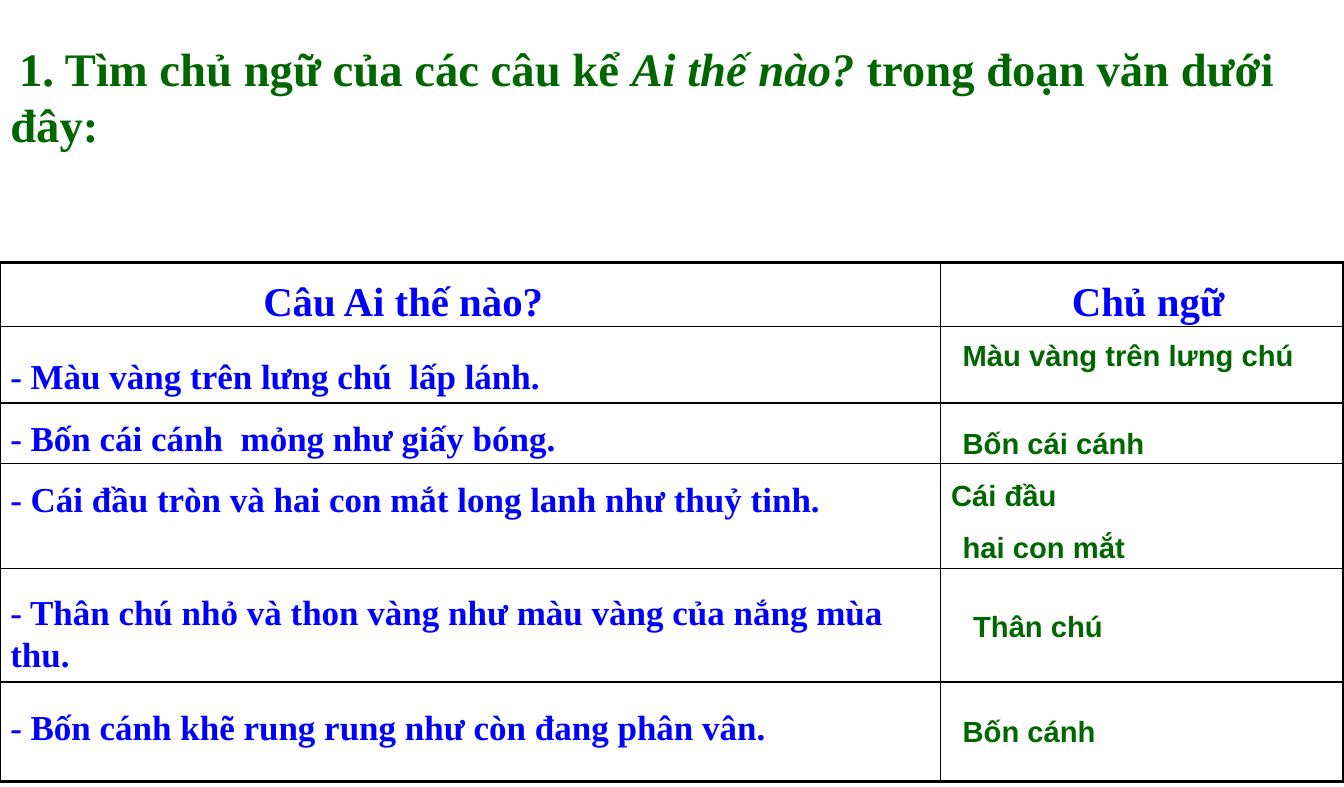
from lxml.etree import SubElement
from pptx import Presentation
from pptx.dml.color import RGBColor
from pptx.enum.text import MSO_AUTO_SIZE, PP_ALIGN
from pptx.oxml.ns import qn
from pptx.util import Emu, Inches, Pt

WIDTH, HEIGHT = 12.8, 7.5
SENTENCE_WIDTH = 0.7 * WIDTH
TABLE_TOP = HEIGHT / 3
ROW_HEIGHTS = [0.61, 0.73, 0.58, 1, 1.08, 0.95]
BLUE, GREEN = "0000FF", "006600"
SERIF, SANS = "Times New Roman", "Arial"

presentation = Presentation()
presentation.slide_width = Emu(11704638)
presentation.slide_height = Emu(6858000)
slide = presentation.slides.add_slide(presentation.slide_layouts[6])


def add_text(runs, left, top, width, height, font, size, color, align=PP_ALIGN.LEFT):
    """Add a bold one-paragraph text box and return its paragraph."""
    frame = slide.shapes.add_textbox(
        Inches(left), Inches(top), Inches(width), Inches(height)).text_frame
    frame.word_wrap = True
    frame.auto_size = MSO_AUTO_SIZE.SHAPE_TO_FIT_TEXT
    paragraph = frame.paragraphs[0]
    paragraph.alignment = align
    paragraph.font.name, paragraph.font.size, paragraph.font.bold = font, Pt(size), True
    paragraph.font.color.rgb = RGBColor.from_string(color)
    for words in runs:
        paragraph.add_run().text = words
    return paragraph


def add_border(cell, side, points):
    line = SubElement(cell._tc.get_or_add_tcPr(), qn(f"a:ln{side}"), w=str(Pt(points)))
    SubElement(SubElement(line, qn("a:solidFill")), qn("a:srgbClr"), val="000000")


# Empty ruled table with a heavier outer frame
grid = slide.shapes.add_table(
    len(ROW_HEIGHTS), 2, 0, Inches(TABLE_TOP), Inches(WIDTH), Inches(sum(ROW_HEIGHTS))).table
grid.first_row = grid.horz_banding = False
for column, width in zip(grid.columns, [SENTENCE_WIDTH, WIDTH - SENTENCE_WIDTH]):
    column.width = Inches(width)
last_row = len(ROW_HEIGHTS) - 1
for r, height in enumerate(ROW_HEIGHTS):
    grid.rows[r].height = Inches(height)
    for c in range(2):
        cell = grid.cell(r, c)
        outer_sides = {"L": c == 0, "R": c == 1, "T": r == 0, "B": r == last_row}
        for side, outer in outer_sides.items():
            add_border(cell, side, 2.25 if outer else 1)
        cell.fill.background()

# Column headings
for heading, left, width in [("Câu Ai thế nào?", 0, 0.6 * WIDTH), ("Chủ ngữ", 9.07, 3.73)]:
    add_text([heading], left, 2.58, width, 0.57, SERIF, 28, BLUE, PP_ALIGN.CENTER)

# Sentences
for sentence, top, height, align in [
    ("- Màu vàng trên lưng chú  lấp lánh.", 3.33, 0.5, PP_ALIGN.JUSTIFY),
    ("- Bốn cái cánh  mỏng như giấy bóng.", 3.92, 0.5, PP_ALIGN.JUSTIFY),
    ("- Cái đầu tròn và hai con mắt long lanh như thuỷ tinh.", 4.5, 0.51, PP_ALIGN.LEFT),
    ("- Bốn cánh khẽ rung rung như còn đang phân vân.", 6.67, 0.51, PP_ALIGN.LEFT),
    ("- Thân chú nhỏ và thon vàng như màu vàng của nắng mùa thu.", 5.58, 0.91, PP_ALIGN.LEFT),
]:
    add_text([sentence], 0, top, SENTENCE_WIDTH, height, SERIF, 24, BLUE, align)

# Subjects of the sentences
for subject, left, top in [
    ("Màu vàng trên lưng chú", 9.07, 3.17),
    ("Bốn cái cánh", 9.07, 4),
    ("Cái đầu", SENTENCE_WIDTH, 4.5),
    ("hai con mắt", 9.07, 5),
    ("Thân chú", 9.17, 5.75),
    ("Bốn cánh", 9.07, 6.75),
]:
    add_text([subject], left, top, WIDTH - left, 0.43, SANS, 20, GREEN)

# Exercise title
title = add_text(
    [" ", "1. Tìm chủ ngữ của các câu kể ", "Ai thế nào?", " trong đoạn văn dưới đây:"],
    0, 0.33, WIDTH, 1.18, SERIF, 32, GREEN)
title.runs[0].font.size = Pt(24)
title.runs[0].font.bold = False
title.runs[2].font.italic = True

presentation.save("out.pptx")
